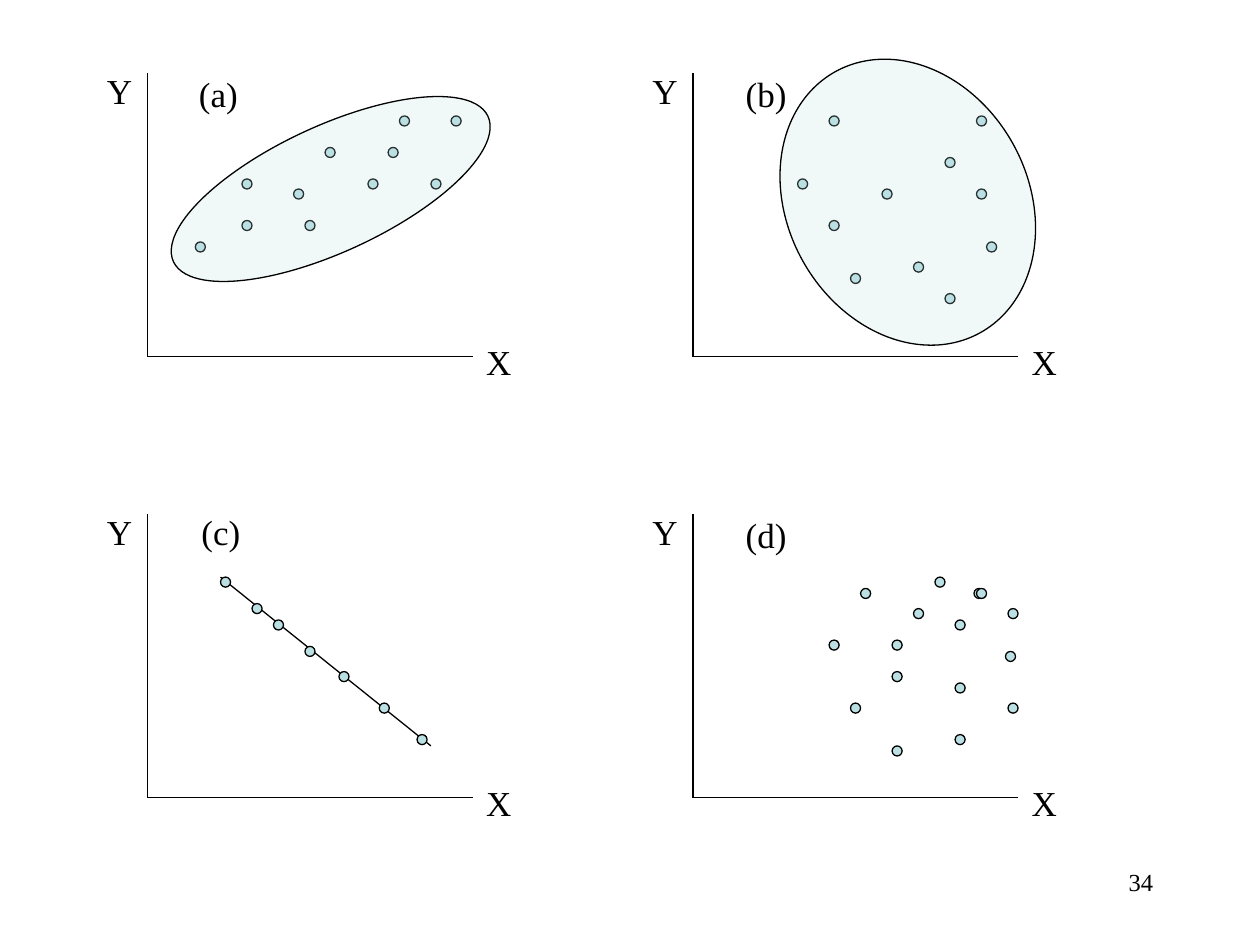
import pptx
import pptx.util
import pptx.dml.color
import pptx.enum.shapes
import pptx.enum.text
import pptx.oxml.ns
import lxml.etree

Inches = pptx.util.Inches
COLORS = {"ink": "000000", "dot": "BBE0E3"}
FONT = "Times New Roman"
DOT = 0.08
AXIS_W, AXIS_H = 2.58, 2.25

PANELS = [
    {
        "at": (1.17, 0.58), "name": "(a)", "tag": (0.31, -0.05, 0.51),
        "dots": [(0.75, 0.84), (0.75, 1.17), (0.38, 1.34), (1.16, 0.92),
                 (1.25, 1.17), (1.41, 0.59), (1.75, 0.84), (2, 0.34),
                 (1.91, 0.59), (2.25, 0.84), (2.41, 0.34)],
        "oval": (0.08, 0.42, 2.75, 1, 335.2),
    },
    {
        "at": (5.5, 0.58), "name": "(b)", "tag": (0.32, -0.05, 0.53),
        "dots": [(1.08, 0.34), (0.83, 0.84), (1.5, 0.92), (1.08, 1.17),
                 (1.25, 1.59), (1.75, 1.5), (2, 1.75), (2.33, 1.34),
                 (2.25, 0.92), (2, 0.67), (2.25, 0.34)],
        "oval": (0.75, -0.16, 1.91, 2.37, 330.9),
    },
    {
        "at": (1.17, 4.08), "name": "(c)", "tag": (0.33, -0.08, 0.51),
        "trend": (0.58, 0.5, 2.25, 1.84),
        "dots": [(1.52, 1.25), (1.25, 1.05), (1, 0.84), (0.83, 0.71),
                 (0.58, 0.5), (1.84, 1.5), (2.14, 1.75)],
    },
    {
        "at": (5.5, 4.08), "name": "(d)", "tag": (0.32, -0.05, 0.53),
        "dots": [(1.08, 1), (1.33, 0.59), (1.58, 1), (1.58, 1.25),
                 (1.25, 1.5), (1.58, 1.84), (2.08, 1.75), (2.08, 1.34),
                 (2.5, 1.5), (2.48, 1.09), (2.08, 0.84), (2.5, 0.75),
                 (2.23, 0.59), (2.25, 0.59), (1.92, 0.5), (1.75, 0.75)],
    },
]


def color(name):
    """Return the named colour as an RGB value."""
    return pptx.dml.color.RGBColor.from_string(COLORS[name])


def add_text(slide, text, x, y, w, h=0.43, size=20):
    """Add one line of text and return its box."""
    box = slide.shapes.add_textbox(Inches(x), Inches(y), Inches(w), Inches(h))
    box.text_frame.text = text
    box.text_frame.word_wrap = False
    font = box.text_frame.paragraphs[0].runs[0].font
    font.name, font.size = FONT, pptx.util.Pt(size)
    font.color.rgb = color("ink")
    return box


def add_line(slide, x1, y1, x2, y2):
    """Add a thin straight line."""
    line = slide.shapes.add_connector(
        pptx.enum.shapes.MSO_CONNECTOR.STRAIGHT,
        Inches(x1), Inches(y1), Inches(x2), Inches(y2))
    line.line.color.rgb = color("ink")
    line.line.width = pptx.util.Pt(0.75)
    lxml.etree.SubElement(line._element.spPr, pptx.oxml.ns.qn("a:effectLst"))


def add_oval(slide, x, y, w, h, turn=0, alpha=None):
    """Add an outlined ellipse, with opacity in percent if given."""
    oval = slide.shapes.add_shape(
        pptx.enum.shapes.MSO_SHAPE.OVAL,
        Inches(x), Inches(y), Inches(w), Inches(h))
    oval.rotation = turn
    oval.shadow.inherit = False
    oval.fill.solid()
    oval.fill.fore_color.rgb = color("dot")
    oval.line.color.rgb = color("ink")
    oval.line.width = pptx.util.Pt(0.75)
    if alpha is not None:
        fill = oval._element.spPr.find(pptx.oxml.ns.qn("a:solidFill"))
        lxml.etree.SubElement(
            fill[0], pptx.oxml.ns.qn("a:alpha"), val=str(alpha * 1000))


def add_axes(slide, x, y, w, h):
    """Draw the two axes of a plot with their letters."""
    add_line(slide, x, y, x, y + h)
    add_line(slide, x, y + h, x + w, y + h)
    add_text(slide, "Y", x - 0.42, y - 0.08, 0.4)
    add_text(slide, "X", x + w + 0.01, y + h - 0.18, 0.4)


def add_panel(slide, panel):
    """Draw one scatter plot from its top left corner."""
    x, y = panel["at"]
    add_axes(slide, x, y, AXIS_W, AXIS_H)
    left, top, wide = panel["tag"]
    add_text(slide, panel["name"], x + left, y + top, wide)
    if "trend" in panel:
        x1, y1, x2, y2 = panel["trend"]
        add_line(slide, x + x1, y + y1, x + x2, y + y2)
    for dx, dy in panel["dots"]:
        add_oval(slide, x + dx, y + dy, DOT, DOT)
    if "oval" in panel:
        dx, dy, w, h, turn = panel["oval"]
        add_oval(slide, x + dx, y + dy, w, h, turn, 22)


def add_number(slide, x, y, w, h):
    """Add the page number, set to the right."""
    box = add_text(slide, "34", x, y, w, h, 14)
    box.text_frame.word_wrap = True
    box.text_frame.paragraphs[0].alignment = pptx.enum.text.PP_ALIGN.RIGHT


def main():
    """Build the slide and save it."""
    deck = pptx.Presentation()
    deck.slide_width, deck.slide_height = Inches(10), Inches(7.5)
    slide = deck.slides.add_slide(deck.slide_layouts[6])
    for panel in PANELS:
        add_panel(slide, panel)
    add_number(slide, 7.17, 6.83, 2.08, 0.5)
    deck.save("out.pptx")


if __name__ == "__main__":
    main()
